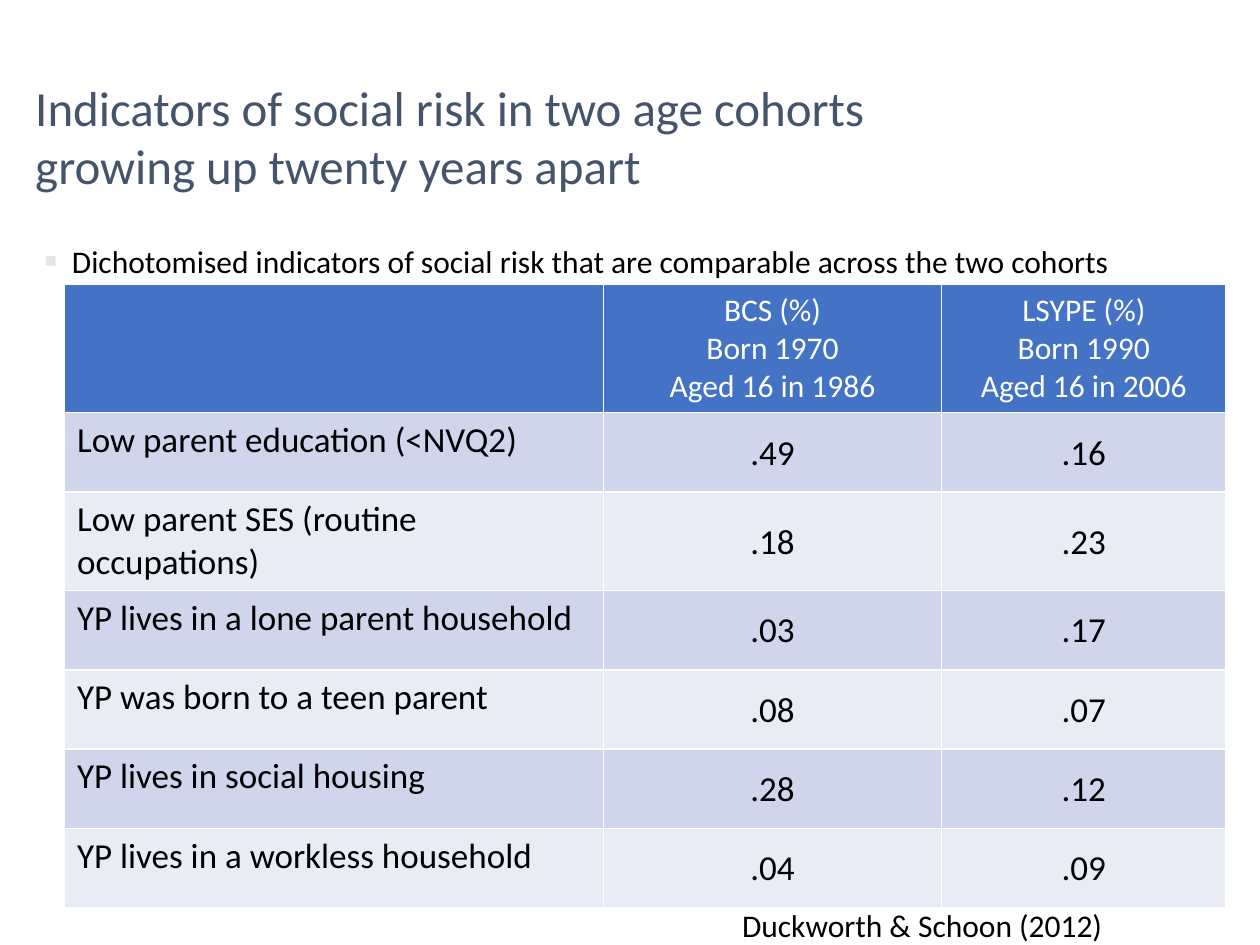
from lxml import etree
from pptx import Presentation
from pptx.dml.color import RGBColor
from pptx.enum import text
from pptx.oxml import ns
from pptx.util import Cm, Pt

HEADER_FILL = "4472C4"
BAND_FILLS = ["CFD5EA", "E9EBF5"]
BLACK, WHITE = "000000", "FFFFFF"


def color(hex_string):
    return RGBColor.from_string(hex_string)


def format_text(frame, size, hex_string, align=text.PP_ALIGN.LEFT):
    for para in frame.paragraphs:
        para.alignment = align
        for span in para.runs:
            span.font.name = "Calibri"
            span.font.size = Pt(size)
            span.font.bold = False
            span.font.color.rgb = color(hex_string)


deck = Presentation()
deck.slide_width, deck.slide_height = Cm(25.4), Cm(19.05)
page = deck.slides.add_slide(deck.slide_layouts[1])
title, body = page.shapes.title, page.placeholders[1]

# Title and body placeholders
title.left, title.top, title.width, title.height = Cm(0.71), Cm(0.74), Cm(17.07), Cm(3.18)
body.left, body.top, body.width, body.height = Cm(0.89), Cm(4.88), Cm(23.6), Cm(11.53)
title.text_frame.text = "Indicators of social risk in two age cohorts growing up twenty years apart"
body.text_frame.text = (
    "Dichotomised indicators of social risk that are comparable across the two cohorts"
)
for box, size, hex_string, anchor in [
    (title, 28, "44546A", text.MSO_ANCHOR.BOTTOM),
    (body, 18, BLACK, text.MSO_ANCHOR.TOP),
]:
    frame = box.text_frame
    frame.auto_size = text.MSO_AUTO_SIZE.NONE
    frame.word_wrap = True
    frame.vertical_anchor = anchor
    frame.margin_left = frame.margin_right = frame.margin_top = frame.margin_bottom = 0
    format_text(frame, size, hex_string)
title.text_frame.paragraphs[0].line_spacing = Pt(33.3)

# Square grey bullet
para = body.text_frame.paragraphs[0]
para.space_before = Pt(10.5)
properties = para._p.get_or_add_pPr()
properties.set("marL", str(Cm(0.56)))
properties.set("indent", str(-Cm(0.56)))
bullet_color = etree.SubElement(properties, ns.qn("a:buClr"))
etree.SubElement(bullet_color, ns.qn("a:srgbClr"), val="E7E6E6")
etree.SubElement(properties, ns.qn("a:buSzPct"), val="120000")
etree.SubElement(properties, ns.qn("a:buFont"), typeface="Calibri")
etree.SubElement(properties, ns.qn("a:buChar"), char="▪")

# Table of risk indicators
rows = [
    ("", "BCS (%)\nBorn 1970\nAged 16 in 1986", "LSYPE (%)\nBorn 1990\nAged 16 in 2006"),
    ("Low parent education (<NVQ2)", ".49", ".16"),
    ("Low parent SES (routine occupations)", ".18", ".23"),
    ("YP lives in a lone parent household", ".03", ".17"),
    ("YP was born to a teen parent", ".08", ".07"),
    ("YP lives in social housing", ".28", ".12"),
    ("YP lives in a workless household", ".04", ".09"),
]
table = page.shapes.add_table(
    len(rows), 3, Cm(1.3), Cm(5.74), Cm(23.42), Cm(11.84)
).table
for column, width in zip(table.columns, [10.87, 6.81, 5.74]):
    column.width = Cm(width)
for r, values in enumerate(rows):
    is_header = r == 0
    table.rows[r].height = Cm(2.24 if is_header else 1.6)
    for c, value in enumerate(values):
        cell = table.cell(r, c)
        cell.text_frame.text = value
        cell.fill.solid()
        cell.fill.fore_color.rgb = color(HEADER_FILL if is_header else BAND_FILLS[(r - 1) % 2])
        align = text.PP_ALIGN.CENTER if c else text.PP_ALIGN.LEFT
        format_text(cell.text_frame, 18 if is_header else 20, WHITE if is_header else BLACK, align)
        if c and not is_header:
            cell.vertical_anchor = text.MSO_ANCHOR.MIDDLE
            cell.margin_left = cell.margin_right = cell.margin_top = Cm(0.03)
            cell.margin_bottom = 0

# Citation
citation = page.shapes.add_textbox(Cm(14.71), Cm(18.14), Cm(10.21), Cm(1.02))
citation.text_frame.word_wrap = True
citation.text_frame.auto_size = text.MSO_AUTO_SIZE.SHAPE_TO_FIT_TEXT
citation.text_frame.text = "Duckworth & Schoon (2012)"
format_text(citation.text_frame, 18, BLACK)

deck.save("out.pptx")
